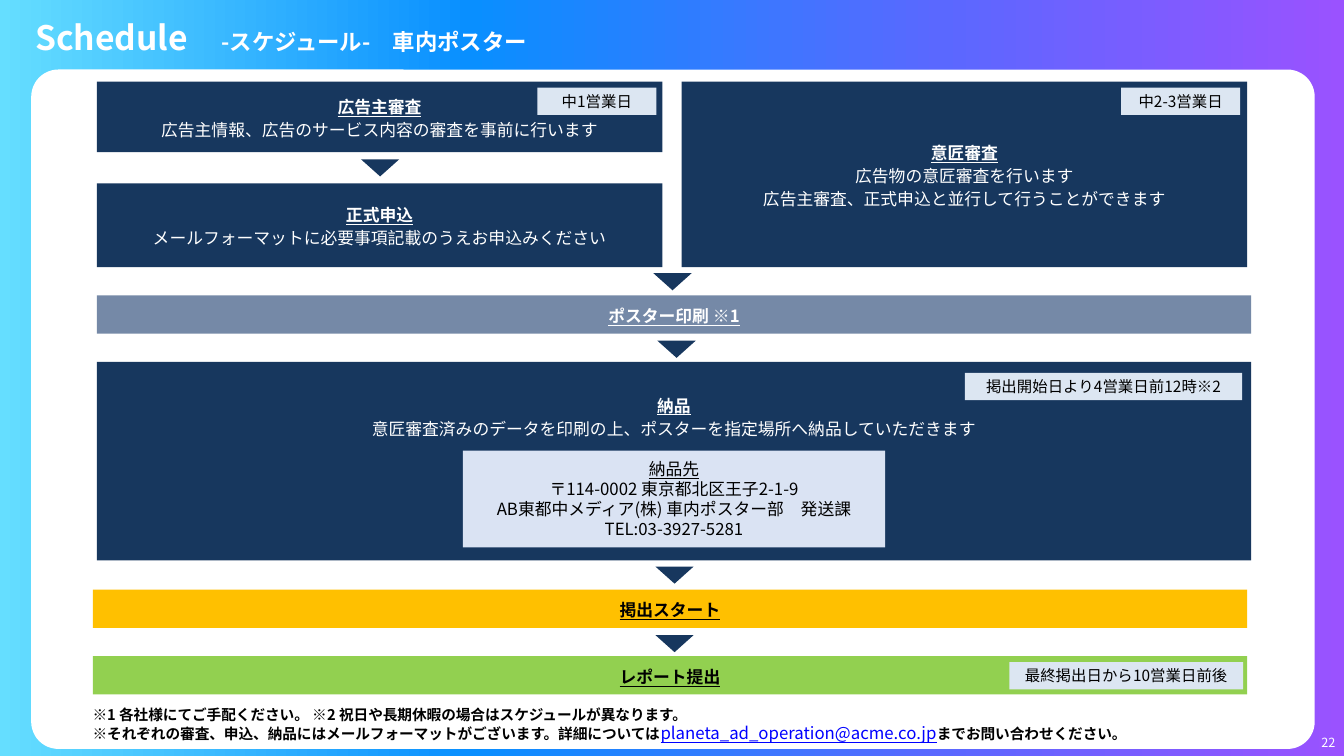
from lxml import etree
from pptx import Presentation
from pptx.dml.color import RGBColor
from pptx.enum.shapes import MSO_SHAPE
from pptx.enum.text import MSO_ANCHOR, PP_ALIGN
from pptx.oxml.ns import qn
from pptx.util import Pt

RECT = MSO_SHAPE.RECTANGLE
ROUND = MSO_SHAPE.ROUNDED_RECTANGLE
TRI = MSO_SHAPE.ISOSCELES_TRIANGLE
MID, TOP = MSO_ANCHOR.MIDDLE, MSO_ANCHOR.TOP
LEFT, MIDDLE = PP_ALIGN.LEFT, PP_ALIGN.CENTER

PX = 9144
WIDE, HIGH = 1333, 750
FONT = "Noto Sans CJK JP"
COLORS = {
    "white": "FFFFFF", "black": "000000", "navy": "17375E",
    "slate": "7589A7", "gold": "FFC000", "green": "92D050",
    "tag": "DCE6F2", "pale": "DAE3F3", "link": "0000FF",
}
BLEND = [(0, "65DEFF"), (35, "098FFF"), (70, "5A68FF"), (100, "9A52FF")]


class Deck:
    """Holds the style and the current slide, and draws each kind of element."""

    def __init__(self):
        self.prs = Presentation()
        self.prs.slide_width = WIDE * PX
        self.prs.slide_height = HIGH * PX
        self.slide = self.prs.slides.add_slide(self.prs.slide_layouts[6])

    def shape(self, kind, box, color=None):
        item = self.slide.shapes.add_shape(kind, *(n * PX for n in box))
        item.shadow.inherit = False
        item.line.fill.background()
        if color:
            item.fill.solid()
            item.fill.fore_color.rgb = RGBColor.from_string(COLORS[color])
        return item

    def back(self):
        fill = self.shape(RECT, (0, 0, WIDE, HIGH)).fill
        fill.gradient()
        fill.gradient_angle = 0
        stops = fill._fill._gradFill.find(qn("a:gsLst"))
        for old in list(stops):
            stops.remove(old)
        for pos, shade in BLEND:
            stop = etree.SubElement(stops, qn("a:gs"), pos=str(pos * 1000))
            etree.SubElement(stop, qn("a:srgbClr"), val=shade)
        panel = self.shape(ROUND, (31, 69, 1273, 674), "white")
        panel.adjustments[0] = 0.04

    def label(self, frame, rows, align=MIDDLE, space=1.0, anchor=MID):
        frame.word_wrap = True
        frame.vertical_anchor = anchor
        for i, row in enumerate(rows):
            para = frame.add_paragraph() if i else frame.paragraphs[0]
            para.alignment = align
            para.line_spacing = space
            for text, size, color, bold, under in row:
                run = para.add_run()
                run.text = text
                font = run.font
                font.name = FONT
                font.size = Pt(size)
                font.bold = bold
                font.underline = under
                font.color.rgb = RGBColor.from_string(COLORS[color])
                etree.SubElement(font._element, qn("a:ea"), typeface=FONT)

    def block(self, box, color, rows, space=1.0, foot=5):
        frame = self.shape(RECT, box, color).text_frame
        frame.margin_left = frame.margin_right = 0
        frame.margin_bottom = foot * PX
        self.label(frame, rows, space=space)

    def step(self, box, color, head, *lines, ink="white", foot=5):
        rows = [[(head, 12, ink, True, True)]]
        rows += [[(line, 12, ink, False, False)] for line in lines]
        self.block(box, color, rows, 1.14, foot)

    def tag(self, x, y, wide, text):
        row = [(text, 11, "black", False, False)]
        self.block((x, y, wide, 27), "tag", [row])

    def arrow(self, x, y):
        self.shape(TRI, (x, y, 38, 17), "navy").rotation = 180

    def note(self, box, rows, align=LEFT, anchor=MID, side=10):
        area = self.slide.shapes.add_textbox(*(n * PX for n in box))
        frame = area.text_frame
        frame.margin_left = frame.margin_right = side * PX
        self.label(frame, rows, align, anchor=anchor)


def main():
    deck = Deck()
    deck.back()
    deck.note((1302, 724, 31, 25), [[("22", 9, "white", False, False)]],
              MIDDLE, side=0)
    deck.note((25, 12, 1283, 49), [[
        ("Schedule　", 24, "white", True, False),
        ("-スケジュール-　車内ポスター", 16, "white", True, False),
    ]])

    deck.step((96, 81, 561, 70), "navy", "広告主審査",
              "広告主情報、広告のサービス内容の審査を事前に行います")
    deck.step((96, 182, 561, 83), "navy", "正式申込",
              "メールフォーマットに必要事項記載のうえお申込みください")
    deck.step((676, 81, 561, 184), "navy", "意匠審査",
              "広告物の意匠審査を行います",
              "広告主審査、正式申込と並行して行うことができます")
    deck.step((96, 293, 1145, 38), "slate", "ポスター印刷 ※1")
    deck.step((96, 359, 1145, 197), "navy", "納品",
              "意匠審査済みのデータを印刷の上、ポスターを指定場所へ納品していただきます",
              foot=95)
    deck.step((92, 585, 1145, 38), "gold", "掲出スタート", ink="black")
    deck.step((92, 651, 1145, 38), "green", "レポート提出", ink="black")

    place = ["〒114-0002 東京都北区王子2-1-9",
             "AB東都中メディア(株) 車内ポスター部　発送課",
             "TEL:03-3927-5281"]
    rows = [[("納品先", 12, "black", False, True)]]
    rows += [[(line, 12, "black", False, False)] for line in place]
    deck.block((459, 447, 419, 96), "pale", rows)

    for x, y, wide, text in [
        (533, 87, 118, "中1営業日"),
        (1112, 87, 118, "中2-3営業日"),
        (957, 370, 275, "掲出開始日より4営業日前12時※2"),
        (1001, 657, 232, "最終掲出日から10営業日前後"),
    ]:
        deck.tag(x, y, wide, text)

    for x, y in [(358, 158), (648, 271), (652, 338), (650, 562), (650, 630)]:
        deck.arrow(x, y)

    deck.note((82, 695, 1218, 48), [
        [("※1 各社様にてご手配ください。 ※2 祝日や長期休暇の場合はスケジュールが異なります。",
          10.5, "black", True, False)],
        [("※それぞれの審査、申込、納品にはメールフォーマットがございます。詳細については",
          10.5, "black", True, False),
         ("planeta_ad_operation@acme.co.jp", 12, "link", False, True),
         ("までお問い合わせください。", 10.5, "black", True, False)],
    ], anchor=TOP)
    deck.prs.save("out.pptx")


if __name__ == "__main__":
    main()
